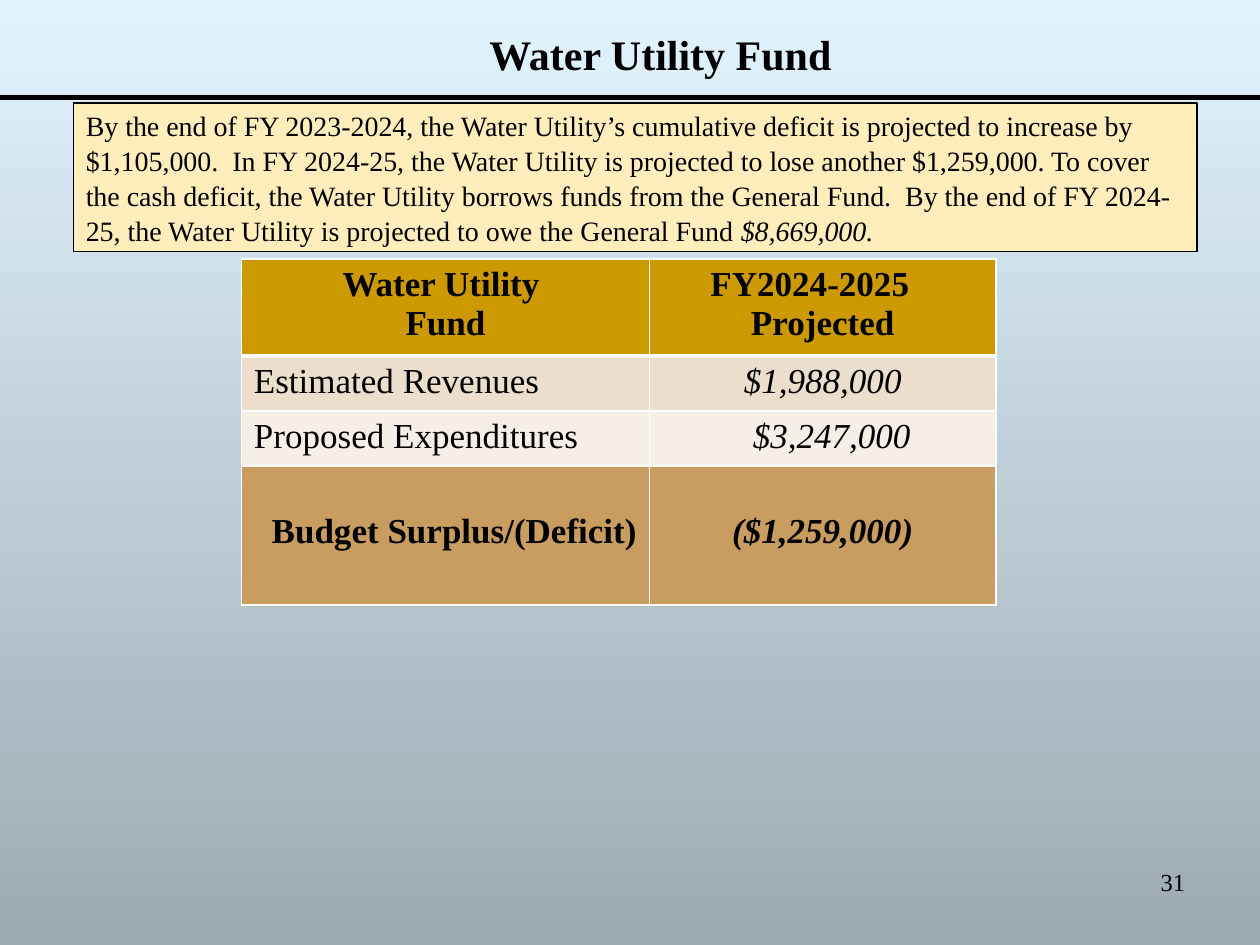
from lxml.etree import SubElement
from pptx import Presentation
from pptx.dml.color import RGBColor
from pptx.enum.shapes import MSO_CONNECTOR, MSO_SHAPE
from pptx.enum.text import MSO_ANCHOR, MSO_AUTO_SIZE, PP_ALIGN
from pptx.oxml.ns import qn
from pptx.util import Cm, Pt

BLACK = RGBColor(0x00, 0x00, 0x00)
WHITE = RGBColor(0xFF, 0xFF, 0xFF)
SKY = RGBColor(0xE1, 0xF4, 0xFF)
SLATE = RGBColor(0x9D, 0xAA, 0xB2)
CREAM = RGBColor(0xFF, 0xEE, 0xBC)
GOLD = RGBColor(0xCC, 0x99, 0x00)
SAND = RGBColor(0xEC, 0xDE, 0xCC)
IVORY = RGBColor(0xF6, 0xEF, 0xE7)
TAN = RGBColor(0xC9, 0x9C, 0x60)

LEFT, CENTER, RIGHT = PP_ALIGN.LEFT, PP_ALIGN.CENTER, PP_ALIGN.RIGHT


class Deck:
    font = "Times New Roman"

    def __init__(self, prs):
        self.prs = prs
        self.s = prs.slides.add_slide(prs.slide_layouts[5])

    def background(self, top, bottom):
        fill = self.s.background.fill
        fill.gradient()
        fill.gradient_angle = 270
        for stop, color in zip(fill.gradient_stops, (top, bottom)):
            stop.color.rgb = color

    def run(self, p, text, size, bold=False, italic=False):
        r = p.add_run()
        r.text = text
        r.font.name = self.font
        r.font.size = Pt(size)
        r.font.bold = bold
        r.font.italic = italic
        r.font.color.rgb = BLACK

    def title(self, text, x, y, w, h):
        sp = self.s.shapes.title
        sp.left, sp.top, sp.width, sp.height = Cm(x), Cm(y), Cm(w), Cm(h)
        tf = sp.text_frame
        tf.auto_size = MSO_AUTO_SIZE.NONE
        tf.vertical_anchor = MSO_ANCHOR.BOTTOM
        p = tf.paragraphs[0]
        p.alignment = CENTER
        self.run(p, " ", 44, bold=True)
        self.run(p, text, 24, bold=True)

    def rule(self, y, weight):
        line = self.s.shapes.add_connector(
            MSO_CONNECTOR.STRAIGHT, 0, Cm(y), self.prs.slide_width, Cm(y))
        line.line.color.rgb = BLACK
        line.line.width = Pt(weight)
        SubElement(line._element.spPr, qn("a:effectLst"))

    def label(self, text, x, y, w, h, size, align):
        tf = self.s.shapes.add_textbox(Cm(x), Cm(y), Cm(w), Cm(h)).text_frame
        tf.word_wrap = True
        p = tf.paragraphs[0]
        p.alignment = align
        self.run(p, text, size)

    def panel(self, runs, x, y, w, h, size):
        sp = self.s.shapes.add_shape(
            MSO_SHAPE.RECTANGLE, Cm(x), Cm(y), Cm(w), Cm(h))
        sp.shadow.inherit = False
        sp.fill.solid()
        sp.fill.fore_color.rgb = CREAM
        sp.line.color.rgb = BLACK
        sp.line.width = Pt(0.75)
        tf = sp.text_frame
        tf.word_wrap = True
        tf.vertical_anchor = MSO_ANCHOR.MIDDLE
        p = tf.paragraphs[0]
        p.alignment = LEFT
        p.line_spacing = 1.04
        for text, italic in runs:
            self.run(p, text, size, italic=italic)

    def table(self, x, y, widths, heights):
        table = self.s.shapes.add_table(
            len(heights), len(widths), Cm(x), Cm(y),
            Cm(sum(widths)), Cm(sum(heights))).table
        table.first_row = table.horz_banding = False
        for column, width in zip(table.columns, widths):
            column.width = Cm(width)
        for row, height in zip(table.rows, heights):
            row.height = Cm(height)
        return table

    def cell(self, cell, lines, fill, align, bold=False, italic=False,
             left=0.25, right=0.25, top=0.13, bottom_line=1):
        cell.margin_left, cell.margin_right = Cm(left), Cm(right)
        cell.margin_top, cell.margin_bottom = Cm(top), Cm(0.13)
        tf = cell.text_frame
        for i, (text, indent) in enumerate(lines):
            p = tf.add_paragraph() if i else tf.paragraphs[0]
            p.alignment = align
            if indent:
                p._p.get_or_add_pPr().set("marL", str(Cm(indent)))
            self.run(p, text, 20, bold, italic)
        tcPr = cell._tc.get_or_add_tcPr()
        for side, weight in zip("LRTB", (1, 1, 1, bottom_line)):
            ln = SubElement(tcPr, qn(f"a:ln{side}"), w=str(Pt(weight)))
            solid = SubElement(ln, qn("a:solidFill"))
            SubElement(solid, qn("a:srgbClr"), val=str(WHITE))
        cell.fill.solid()
        cell.fill.fore_color.rgb = fill


def main():
    prs = Presentation()
    prs.slide_width, prs.slide_height = Cm(25.4), Cm(19.05)
    deck = Deck(prs)
    deck.background(SKY, SLATE)
    deck.title("Water Utility Fund", 0.84, 0.2, 24.56, 1.65)
    deck.label("31", 18.21, 17.35, 5.93, 1.32, 14, RIGHT)
    deck.rule(1.96, 3)
    deck.panel([
        ("By the end of FY 2023-2024, the Water Utility’s cumulative deficit "
         "is projected to increase by $1,105,000.  In FY 2024-25, the Water "
         "Utility is projected to lose another $1,259,000. To cover the cash "
         "deficit, the Water Utility borrows funds from the General Fund.  "
         "By the end of FY 2024-25, the Water Utility is projected to owe "
         "the General Fund ", False),
        ("$8,669,000.", True),
    ], 1.48, 2.08, 22.65, 2.99, 16)

    table = deck.table(4.87, 5.22, (8.22, 6.99), (1.93, 1.09, 1.11, 2.8))
    header = dict(fill=GOLD, align=CENTER, bold=True, bottom_line=3)
    deck.cell(table.cell(0, 0), [("Water Utility ", 0), ("Fund", 0)], **header)
    deck.cell(table.cell(0, 1), [("FY2024-2025", 0), ("Projected", 0.52)],
              right=0.77, **header)
    body = [
        ("Estimated Revenues", "$1,988,000", SAND, 0.25),
        ("Proposed Expenditures", "$3,247,000", IVORY, 0.61),
    ]
    for i, (name, amount, fill, left) in enumerate(body, 1):
        deck.cell(table.cell(i, 0), [(name, 0)], fill, LEFT)
        deck.cell(table.cell(i, 1), [(amount, 0)], fill, CENTER,
                  italic=True, left=left)
    total = dict(fill=TAN, bold=True, top=0.93)
    deck.cell(table.cell(3, 0), [("Budget Surplus/(Deficit)", 0)],
              align=RIGHT, **total)
    deck.cell(table.cell(3, 1), [("($1,259,000)", 0)],
              align=CENTER, italic=True, **total)
    prs.save("out.pptx")


if __name__ == "__main__":
    main()
